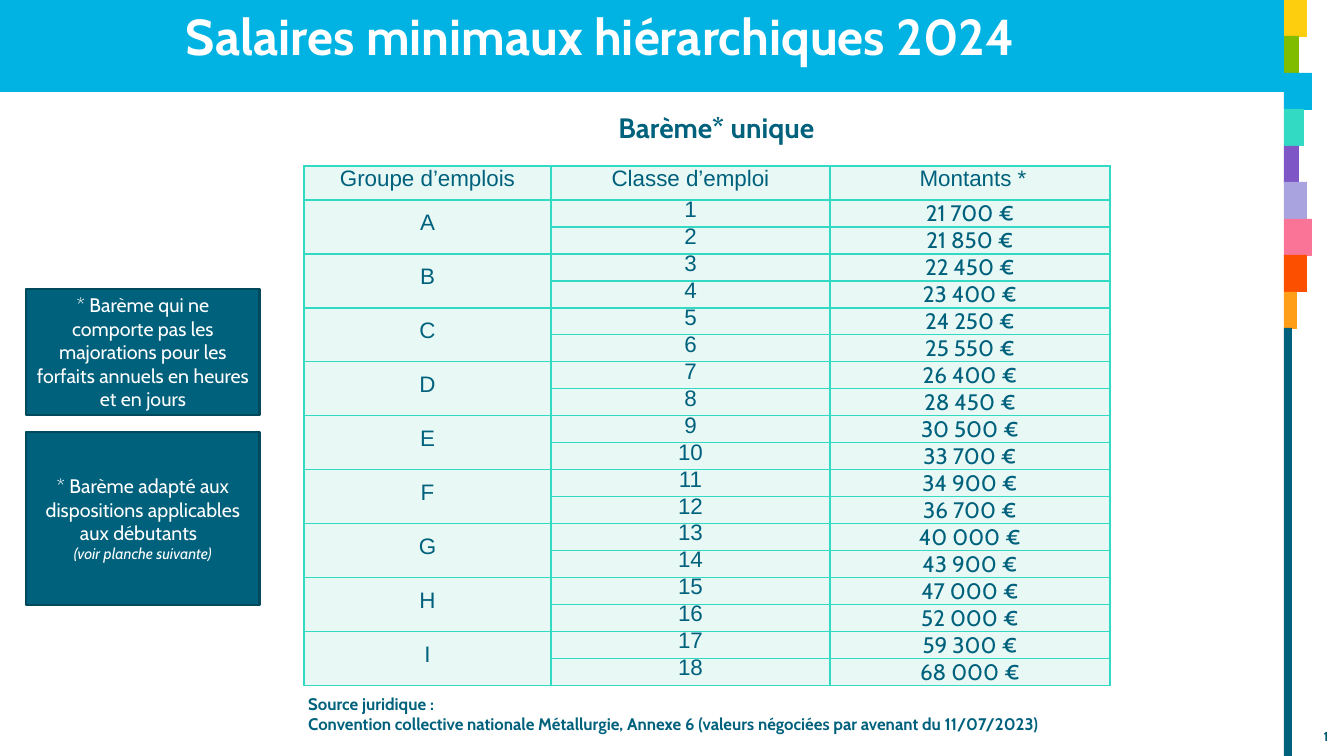
from lxml.etree import SubElement
from pptx import Presentation
from pptx.dml.color import RGBColor
from pptx.enum.shapes import MSO_SHAPE
from pptx.enum.text import MSO_ANCHOR, PP_ALIGN
from pptx.oxml.ns import qn
from pptx.util import Emu, Pt

SCALE = 914400 / 100.8

WHITE = RGBColor(0xFF, 0xFF, 0xFF)
SKY = RGBColor(0x00, 0xB3, 0xE3)
TEAL = RGBColor(0x00, 0x61, 0x7D)
DEEP = RGBColor(0x00, 0x48, 0x5C)
NIGHT = RGBColor(0x00, 0x59, 0x71)
MINT = RGBColor(0x32, 0xDA, 0xC4)
PALE = RGBColor(0xE8, 0xF8, 0xF5)
YELLOW = RGBColor(0xFC, 0xCE, 0x0E)
GREEN = RGBColor(0x80, 0xBD, 0x01)
PURPLE = RGBColor(0x7F, 0x56, 0xC6)
LILAC = RGBColor(0xA9, 0xA3, 0xE0)
PINK = RGBColor(0xFA, 0x74, 0x97)
RED = RGBColor(0xFD, 0x4F, 0x00)
ORANGE = RGBColor(0xFF, 0x9E, 0x19)

# Text formats
TITLE = {"name": "Cabin", "size": Pt(36), "bold": True}
HEAD = {"name": "Cabin", "size": Pt(20), "bold": True}
NOTE = {"name": "Cabin", "size": Pt(14)}
SMALL = {"name": "Cabin", "size": Pt(11), "italic": True}
SOURCE = {"name": "Cabin", "size": Pt(12), "bold": True}
PAGE = {"name": "Cabin", "size": Pt(9.3), "bold": True}
LABEL = {"name": "Arial", "size": Pt(16), "bold": False}
MONEY = {"name": "Cabin", "size": Pt(16), "bold": False}
TIGHT = {"line_spacing": Pt(12), "space_after": Pt(8)}

# Colour and width of each block of the side strip
STRIP = [(YELLOW, 23), (GREEN, 15), (SKY, 28), (MINT, 20), (PURPLE, 15),
         (LILAC, 23), (PINK, 28), (RED, 23), (ORANGE, 13)]

HEADERS = ["Groupe d’emplois", "Classe d’emploi", " Montants *"]
WAGES = [21700, 21850, 22450, 23400, 24250, 25550, 26400, 28450, 30500,
         33700, 34900, 36700, 40000, 43900, 47000, 52000, 59300, 68000]


def px(num):
    return Emu(round(num * SCALE))


def apply(item, form):
    for key, value in form.items():
        setattr(item, key, value)


def write(frame, lines, color, align=PP_ALIGN.CENTER, space=None):
    """Fill a text frame with (text, format) lines."""
    for num, (text, form) in enumerate(lines):
        para = frame.add_paragraph() if num else frame.paragraphs[0]
        apply(para, {"alignment": align, **(space or {})})
        run = para.add_run()
        run.text = text
        apply(run.font, form)
        run.font.color.rgb = color
    return frame


def add_box(slide, area, fill, line=None, kind=MSO_SHAPE.RECTANGLE):
    box = slide.shapes.add_shape(kind, *map(px, area))
    box.shadow.inherit = False
    box.fill.solid()
    box.fill.fore_color.rgb = fill
    if line is None:
        box.line.fill.background()
    else:
        box.line.color.rgb = line
        box.line.width = Pt(2)
    apply(box.text_frame, {"word_wrap": True,
                           "vertical_anchor": MSO_ANCHOR.MIDDLE})
    return box.text_frame


def add_text(slide, area, side, edge, anchor):
    frame = slide.shapes.add_textbox(*map(px, area)).text_frame
    apply(frame, {"word_wrap": True, "vertical_anchor": anchor,
                  "margin_left": px(side), "margin_right": px(side),
                  "margin_top": px(edge), "margin_bottom": px(edge)})
    return frame


def style_cell(cell, anchor):
    apply(cell, {"margin_left": px(5), "margin_right": px(5),
                 "margin_top": 0, "margin_bottom": 0,
                 "vertical_anchor": anchor})
    props = cell._tc.get_or_add_tcPr()
    for side in ("a:lnL", "a:lnR", "a:lnT", "a:lnB"):
        line = SubElement(props, qn(side), w=str(Pt(1)))
        fill = SubElement(line, qn("a:solidFill"))
        SubElement(fill, qn("a:srgbClr"), val=str(MINT))
    cell.fill.solid()
    cell.fill.fore_color.rgb = PALE


def add_scale(slide):
    """Wage table: one group for every two classes."""
    count = len(WAGES)
    area = map(px, (304, 166, 806, 34 + 27 * count))
    table = slide.shapes.add_table(count + 1, 3, *area).table
    apply(table, {"first_row": False, "horz_banding": False})
    for col, width in zip(table.columns, (247, 279, 280)):
        col.width = px(width)
    for num, row in enumerate(table.rows):
        row.height = px(27 if num else 34)
        for col, cell in enumerate(row.cells):
            money = num > 0 and col == 2
            style_cell(cell, MSO_ANCHOR.TOP if money else MSO_ANCHOR.MIDDLE)
    for col, text in enumerate(HEADERS):
        write(table.cell(0, col).text_frame, [(text, LABEL)], TEAL,
              space=TIGHT)
    for num, wage in enumerate(WAGES, 1):
        if num % 2:
            group = table.cell(num, 0)
            group.merge(table.cell(num + 1, 0))
            write(group.text_frame, [("ABCDEFGHI"[num // 2], LABEL)], TEAL,
                  space=TIGHT)
        write(table.cell(num, 1).text_frame, [(str(num), LABEL)], TEAL,
              space=TIGHT)
        price = f"{wage:,} €".replace(",", " ")
        write(table.cell(num, 2).text_frame, [(price, MONEY)], TEAL)


def add_strip(slide):
    for num, (color, width) in enumerate(STRIP):
        add_box(slide, (1284, num * 73 // 2, width, 37), color)
    add_box(slide, (1284, 328, 8, 428), TEAL)


def main():
    deck = Presentation()
    deck.slide_width, deck.slide_height = px(1344), px(756)
    slide = deck.slides.add_slide(deck.slide_layouts[6])

    # Page number, side strip and banner
    page = add_text(slide, (1309, 716, 34, 40), 0, 0, MSO_ANCHOR.MIDDLE)
    write(page, [("1", PAGE)], NIGHT)
    add_strip(slide)
    add_box(slide, (0, 0, 1284, 92), SKY)

    # Wage table and its source
    add_scale(slide)
    pill = MSO_SHAPE.FLOWCHART_ALTERNATE_PROCESS
    origin = add_box(slide, (296, 690, 813, 48), WHITE, WHITE, pill)
    write(origin, [
        ("Source juridique :", SOURCE),
        ("Convention collective nationale Métallurgie, Annexe 6 "
         "(valeurs négociées par avenant du 11/07/2023)", SOURCE),
    ], TEAL, PP_ALIGN.LEFT)

    # Side notes
    note = add_box(slide, (26, 289, 234, 126), TEAL, DEEP)
    write(note, [("* Barème qui ne comporte pas les majorations pour les "
                  "forfaits annuels en heures et en jours", NOTE)], WHITE)
    note = add_box(slide, (26, 432, 234, 173), TEAL, DEEP)
    write(note, [("* Barème adapté aux dispositions applicables "
                  "aux débutants  ", NOTE),
                 ("(voir planche suivante)", SMALL)], WHITE)

    # Titles
    title = add_text(slide, (169, 8, 1110, 90), 17, 4, MSO_ANCHOR.TOP)
    write(title, [("Salaires minimaux hiérarchiques 2024", TITLE)], WHITE,
          PP_ALIGN.LEFT, {"line_spacing": 0.9})
    head = add_box(slide, (585, 111, 263, 32), WHITE, WHITE, pill)
    write(head, [("Barème* unique", HEAD)], TEAL)

    deck.save("out.pptx")


if __name__ == "__main__":
    main()
